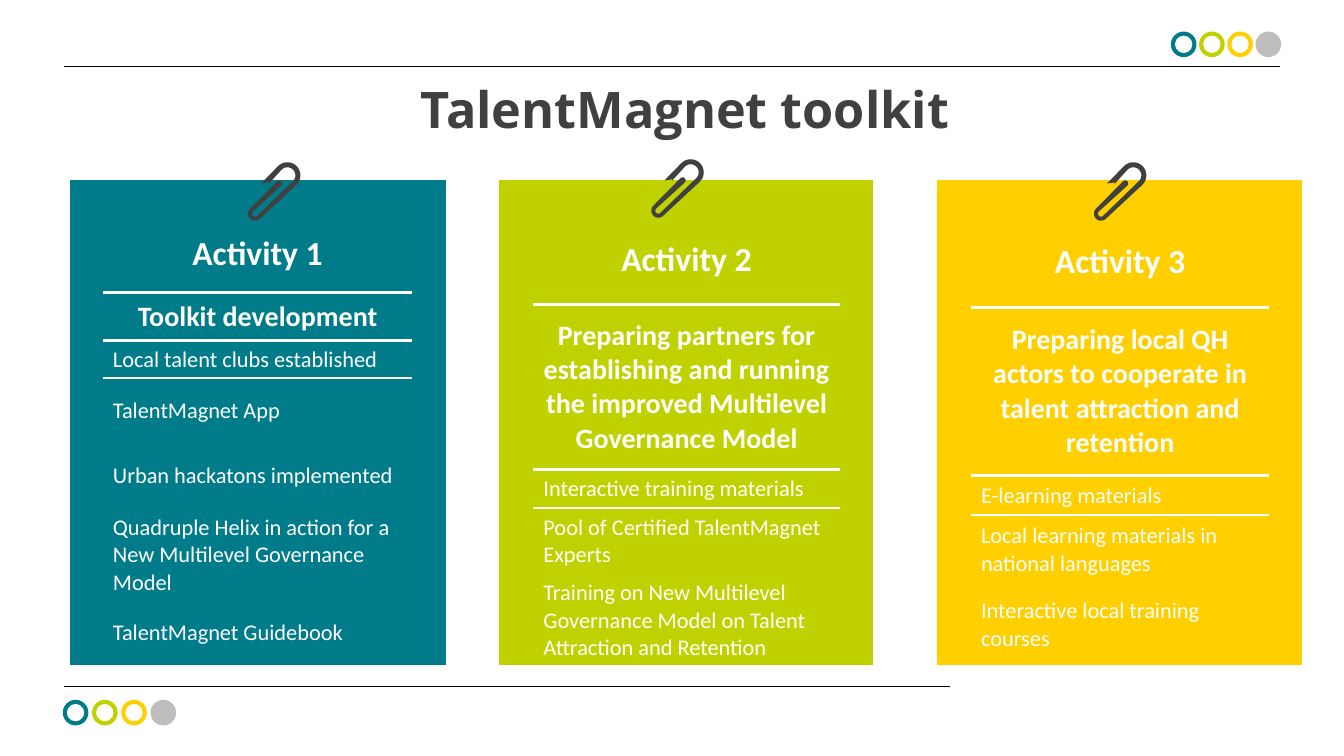
from math import cos, radians, sin

from lxml import etree
from pptx import Presentation
from pptx.dml.color import RGBColor
from pptx.enum.shapes import MSO_CONNECTOR, MSO_SHAPE
from pptx.enum.text import MSO_ANCHOR, PP_ALIGN
from pptx.oxml.ns import qn
from pptx.util import Inches, Pt

DONUT, DISC = MSO_SHAPE.DONUT, MSO_SHAPE.FLOWCHART_CONNECTOR
STRAIGHT = MSO_CONNECTOR.STRAIGHT
CENTER, LEFT = PP_ALIGN.CENTER, PP_ALIGN.LEFT
MIDDLE, BOTTOM = MSO_ANCHOR.MIDDLE, MSO_ANCHOR.BOTTOM
COLORS = {"teal": "007B8A", "lime": "BFD200", "yellow": "FFCF00", "gray": "BFBEBC",
          "dark": "404040", "white": "FFFFFF", "black": "000000"}
NO_GRID_STYLE = "{2D5ABB26-0587-4C30-8999-92F81FD0307C}"
ACTIVITIES = [
    ("teal", 0.69, (0.33, 3.07, 0.33), (0.35, 0.76, 0.48, 0.37, 0.65, 0.65, 0.9, 0.65),
     ("Activity 1", "Toolkit development", "Local talent clubs established",
      "TalentMagnet App", "Urban hackatons implemented",
      "Quadruple Helix in action for a New Multilevel Governance Model",
      "TalentMagnet Guidebook")),
    ("lime", 4.95, (0.34, 3.04, 0.33), (0.35, 0.88, 1.64, 0.38, 0.66, 0.9),
     ("Activity 2",
      "Preparing partners for establishing and running the improved Multilevel Governance Model",
      "Interactive training materials", "Pool of Certified TalentMagnet Experts",
      "Training on New Multilevel Governance Model on Talent Attraction and Retention")),
    ("yellow", 9.29, (0.34, 2.96, 0.32), (0.37, 0.89, 1.67, 0.39, 0.69, 0.8),
     ("Activity 3",
      "Preparing local QH actors to cooperate in talent attraction and retention",
      "E-learning materials", "Local learning materials in national languages",
      "Interactive local training courses")),
]


def rgb(name):
    """Return the named colour."""
    return RGBColor.from_string(COLORS[name])


def style_run(p, size, color, font, bold):
    """Format the only run of a paragraph."""
    f = p.runs[0].font
    f.size, f.name, f.bold = Pt(size), font, bold
    f.color.rgb = rgb(color)


def add_rule(slide, x1, x2, y):
    """Draw a thin horizontal line."""
    line = slide.shapes.add_connector(STRAIGHT, Inches(x1), Inches(y), Inches(x2), Inches(y))
    line.line.color.rgb = rgb("black")
    line.line.width = Pt(0.5)
    etree.SubElement(line._element.spPr, qn("a:effectLst"))


def add_dots(slide, left, top, step):
    """Draw three rings and a disc in a row."""
    for i, color in enumerate(("teal", "lime", "yellow", "gray")):
        kind = DISC if color == "gray" else DONUT
        sp = slide.shapes.add_shape(kind, Inches(left + i * step), Inches(top),
                                    Inches(0.24), Inches(0.24))
        if kind == DONUT:
            sp.adjustments[0] = 0.107
        sp.shadow.inherit = False
        sp.fill.solid()
        sp.fill.fore_color.rgb = rgb(color)
        sp.line.color.rgb = rgb(color)
        sp.line.width = Pt(1)


def add_title(slide, text):
    """Add the centred slide title."""
    box = slide.shapes.add_textbox(Inches(2.7), Inches(0.76), Inches(8.19), Inches(0.67))
    tf = box.text_frame
    tf.word_wrap = True
    tf.vertical_anchor = BOTTOM
    tf.text = text
    p = tf.paragraphs[0]
    p.alignment = CENTER
    p.line_spacing = 0.9
    style_run(p, 36, "dark", "Open Sans", True)


def add_border(cell, side):
    """Give one side of a cell a white border."""
    ln = etree.Element(qn("a:" + side), w=str(Pt(2.25)))
    fill = etree.SubElement(ln, qn("a:solidFill"))
    etree.SubElement(fill, qn("a:srgbClr"), val=COLORS["white"])
    cell._tc.get_or_add_tcPr().insert(0, ln)


def fill_cell(cell, text, size, bold):
    """Write white text into a cell."""
    cell.text = text
    cell.vertical_anchor = MIDDLE
    p = cell.text_frame.paragraphs[0]
    p.alignment = CENTER if bold else LEFT
    style_run(p, size, "white", "Calibri", bold)


def add_activity(slide, color, left, widths, heights, texts):
    """Add one activity card as a table with margin columns."""
    frame = slide.shapes.add_table(len(heights), len(widths), Inches(left), Inches(1.79),
                                   Inches(sum(widths)), Inches(sum(heights)))
    table = frame.table
    table.first_row = table.horz_banding = False
    table._tbl.tblPr.find(qn("a:tableStyleId")).text = NO_GRID_STYLE
    for col, width in zip(table.columns, widths):
        col.width = Inches(width)
    for row, height in zip(table.rows, heights):
        row.height = Inches(height)
    for cell in table.iter_cells():
        cell.fill.solid()
        cell.fill.fore_color.rgb = rgb(color)
    for i in range(len(heights)):
        for j in range(len(widths)):
            cell = table.cell(i, j)
            if i and j == 1:
                size = {1: 24, 2: 20}.get(i, 16)
                fill_cell(cell, texts[i - 1], size, i < 3)
            else:
                cell.margin_top = cell.margin_bottom = 0
    for i, side in ((1, "lnB"), (2, "lnB"), (2, "lnT"), (3, "lnT")):
        add_border(table.cell(i, 1), side)


def arc(cx, cy, radius, start, end):
    """Return points along a circular arc."""
    angles = [radians(start + (end - start) * k / 16) for k in range(17)]
    return [(cx + radius * cos(a), cy + radius * sin(a)) for a in angles]


def add_clip(slide, left, top):
    """Draw a slanted paper clip."""
    points = [
        *arc(0.39, 0.13, 0.13, 225, 405),
        *arc(0.07, 0.51, 0.07, 45, 225),
        *arc(0.31, 0.21, 0.03, 225, 405),
        *arc(0.07, 0.51, 0.03, 225, 45),
        *arc(0.39, 0.13, 0.08, 45, -135),
        (0.2, 0.22), (0.21, 0.2), (0.13, 0.21),
    ]
    points = [(Inches(left + x), Inches(top + y)) for x, y in points]
    builder = slide.shapes.build_freeform(*points[0])
    builder.add_line_segments(points[1:], close=True)
    sp = builder.convert_to_shape()
    sp.shadow.inherit = False
    sp.fill.solid()
    sp.fill.fore_color.rgb = rgb("dark")
    sp.line.fill.background()


def main():
    """Build the toolkit slide."""
    prs = Presentation()
    prs.slide_width, prs.slide_height = Inches(13.33), Inches(7.5)
    slide = prs.slides.add_slide(prs.slide_layouts[6])
    add_rule(slide, 0.63, 12.7, 0.66)
    add_dots(slide, 11.62, 0.32, 0.28)
    add_rule(slide, 0.63, 9.42, 6.81)
    add_dots(slide, 0.63, 6.95, 0.29)
    add_title(slide, "TalentMagnet toolkit")
    for activity in ACTIVITIES:
        add_activity(slide, *activity)
    for left, top in ((2.46, 1.61), (6.46, 1.58), (10.85, 1.61)):
        add_clip(slide, left, top)
    prs.save("out.pptx")


if __name__ == "__main__":
    main()
